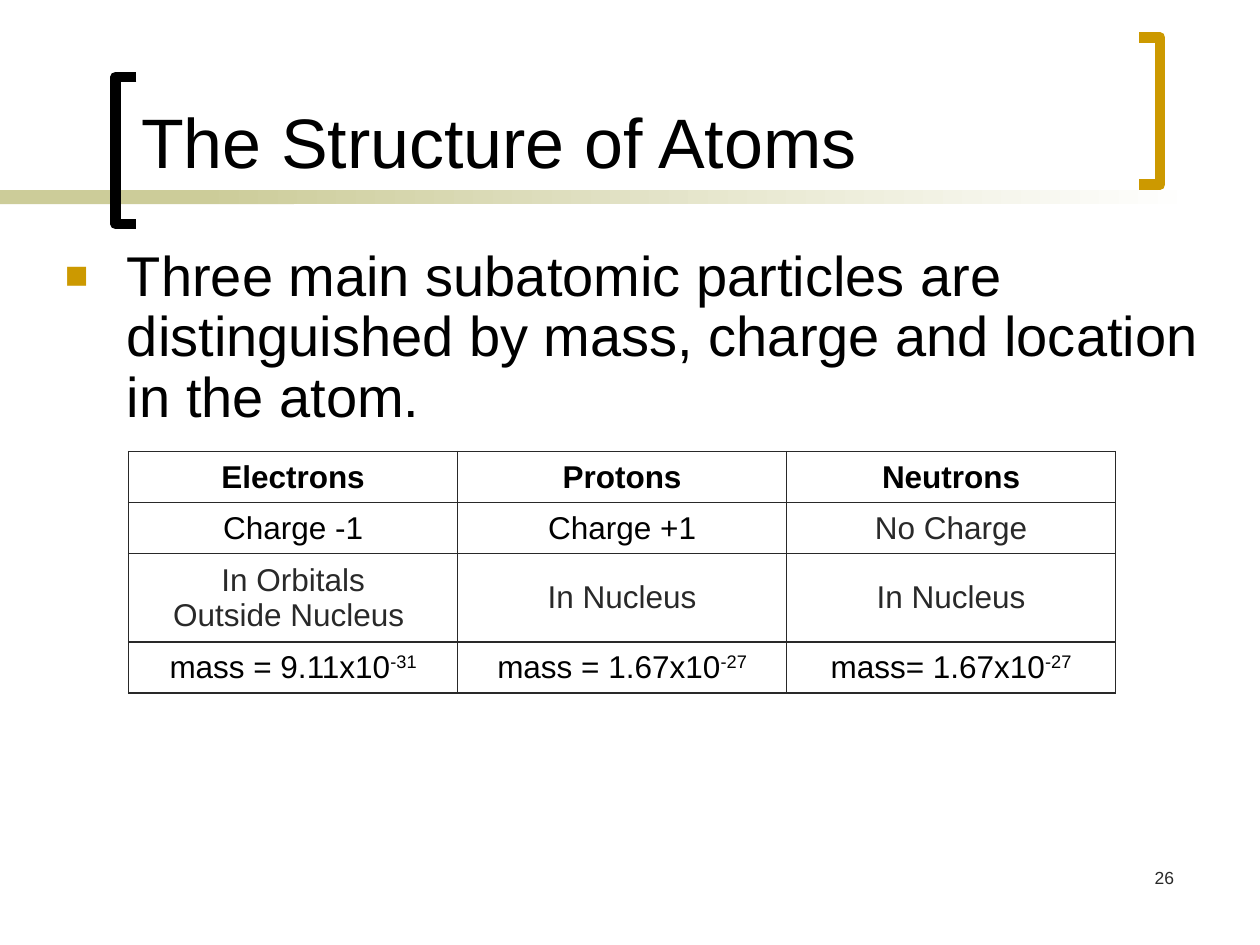
"""Build the slide on the structure of atoms, with its particle table."""
import pptx
import pptx.dml.color
import pptx.enum.shapes
import pptx.enum.text
import pptx.oxml
import pptx.oxml.ns
import pptx.util

Pt = pptx.util.Pt
ALIGN = pptx.enum.text.PP_ALIGN
ANCHOR = pptx.enum.text.MSO_ANCHOR
BLACK, GREY, GOLD, SAGE, WHITE = "000000", "292929", "CC9900", "CCCC99", "FFFFFF"


def rgb(colour):
    return pptx.dml.color.RGBColor.from_string(colour)


def write(frame, text, size, colour=BLACK, bold=False, align=ALIGN.LEFT, anchor=ANCHOR.TOP):
    """Fill a frame: a newline starts a paragraph, a caret starts a superscript."""
    frame.word_wrap = True
    frame.vertical_anchor = anchor
    for number, line in enumerate(text.split("\n")):
        para = frame.add_paragraph() if number else frame.paragraphs[0]
        para.alignment = align
        for part, words in enumerate(line.split("^")):
            span = para.add_run()
            span.text = words
            span.font.name = "Arial"
            span.font.size = Pt(size)
            span.font.bold = bold
            span.font.color.rgb = rgb(colour)
            if part:
                span.font._element.set("baseline", "30000")


deck = pptx.Presentation()
deck.slide_width, deck.slide_height = Pt(720), Pt(540)
page = deck.slides.add_slide(deck.slide_layouts[5])
shapes = page.shapes

for left, width, end_colour in [(0, 168, SAGE), (114, 570, WHITE)]:
    bar = shapes.add_shape(
        pptx.enum.shapes.MSO_SHAPE.RECTANGLE, Pt(left), Pt(108.7), Pt(width), Pt(8)
    )
    bar.shadow.inherit = False
    bar.line.fill.background()
    if end_colour == SAGE:
        bar.fill.solid()
        bar.fill.fore_color.rgb = rgb(SAGE)
    else:
        bar.fill.gradient()
        bar.fill.gradient_angle = 0
        for stop, position, colour in zip(bar.fill.gradient_stops, (0, 1), (SAGE, end_colour)):
            stop.position = position
            stop.color.rgb = rgb(colour)

for tip, spine, top, colour in [(78, 66, 44, BLACK), (651, 663, 21.5, GOLD)]:
    bottom = top + 84
    builder = shapes.build_freeform(Pt(tip), Pt(top))
    builder.add_line_segments(
        [(Pt(spine), Pt(top)), (Pt(spine), Pt(bottom)), (Pt(tip), Pt(bottom))], close=False
    )
    bracket = builder.convert_to_shape()
    bracket.shadow.inherit = False
    bracket.fill.background()
    bracket.line.color.rgb = rgb(colour)
    bracket.line.width = Pt(6)

title = shapes.title
title.left, title.top, title.width, title.height = Pt(73.5), Pt(8), Pt(564), Pt(100)
write(title.text_frame, "The Structure of Atoms", size=40, anchor=ANCHOR.BOTTOM)
title.text_frame.auto_size = pptx.enum.text.MSO_AUTO_SIZE.NONE

body = shapes.add_textbox(Pt(30), Pt(138), Pt(666), Pt(366))
write(
    body.text_frame,
    "Three main subatomic particles are distinguished by mass, charge and location in the atom.",
    size=32,
)
para = body.text_frame.paragraphs[0]
para.line_spacing = 0.9
para.space_before = Pt(6.4)
properties = para._p.get_or_add_pPr()
properties.set("marL", str(Pt(35.5)))
properties.set("indent", str(Pt(-35.5)))
namespace = pptx.oxml.ns.nsdecls("a")
for bullet in [
    f'<a:buClr {namespace}><a:srgbClr val="{GOLD}"/></a:buClr>',
    f'<a:buSzPct {namespace} val="70000"/>',
    f'<a:buFont {namespace} typeface="Arial"/>',
    f'<a:buChar {namespace} char="■"/>',
]:
    properties.append(pptx.oxml.parse_xml(bullet))

number_box = shapes.add_textbox(Pt(528), Pt(492), Pt(150), Pt(36))
write(number_box.text_frame, "26", size=10, colour=GREY, align=ALIGN.RIGHT)

particles = [
    ["Electrons", "Protons", "Neutrons"],
    ["Charge -1", "Charge +1", "No Charge"],
    ["In Orbitals\nOutside Nucleus ", "In Nucleus", "In Nucleus"],
    ["mass = 9.11x10^-31", "mass = 1.67x10^-27", "mass= 1.67x10^-27"],
]
row_heights = [29.2, 29.2, 47.7, 29.2]
table = shapes.add_table(4, 3, Pt(73.5), Pt(258), Pt(564), Pt(sum(row_heights))).table
table.first_row = False
table.horz_banding = False
for column in table.columns:
    column.width = Pt(188)
for row, height, texts in zip(table.rows, row_heights, particles):
    row.height = Pt(height)
    for cell, text in zip(row.cells, texts):
        is_grey = text.startswith(("No ", "In "))
        write(
            cell.text_frame,
            text,
            size=18,
            colour=GREY if is_grey else BLACK,
            bold=texts is particles[0],
            align=ALIGN.CENTER,
        )
        cell.vertical_anchor = ANCHOR.MIDDLE
        borders = cell._tc.get_or_add_tcPr()
        for side in ("lnL", "lnR", "lnT", "lnB"):
            borders.append(pptx.oxml.parse_xml(
                f'<a:{side} {namespace} w="{Pt(1)}"><a:solidFill>'
                f'<a:srgbClr val="{GREY}"/></a:solidFill></a:{side}>'
            ))
        cell.fill.background()

deck.save("out.pptx")
